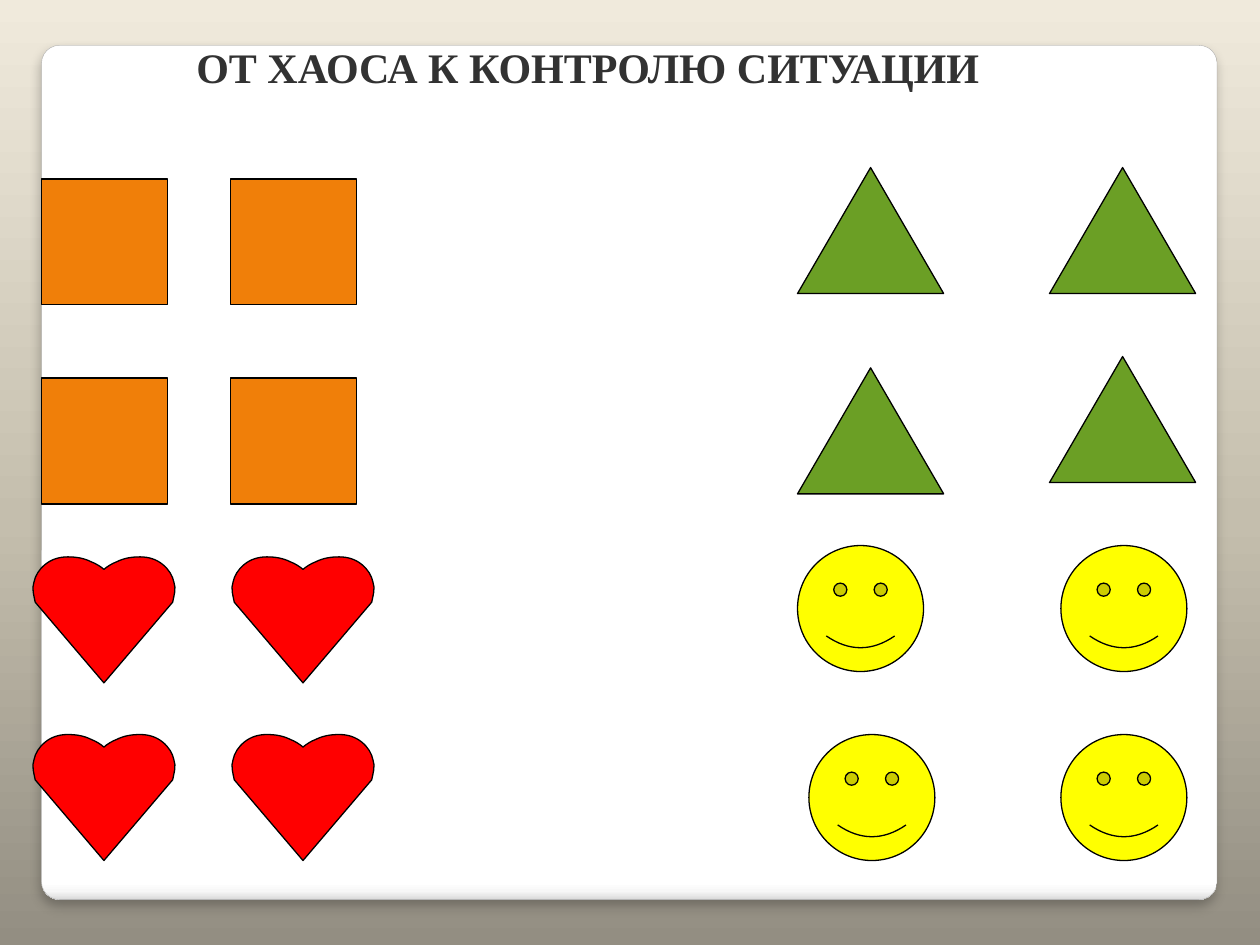
from lxml import etree
from pptx import Presentation
from pptx.dml.color import RGBColor
from pptx.enum.shapes import MSO_SHAPE
from pptx.oxml.ns import qn
from pptx.util import Inches, Pt

COLORS = {
    "title": "323232", "outline": "000000", "panel_edge": "A4A4A4",
    "square": "F07F09", "triangle": "6B9F25", "heart": "FF0000", "smiley": "FFFF00",
}
BACKGROUND_STOPS = [(0, "938E82"), (45, "C4BEAD"), (100, "F0EADC")]
PANEL_STOPS = [(0, "FFFFFF"), (98, "FFFFFF"), (99, "F7F7F7"), (100, "DADADA")]


def set_gradient(fill, element, stops, angle):
    fill.gradient()
    fill.gradient_angle = angle
    stop_list = next(element.iter(qn("a:gsLst")))
    for stop in list(stop_list):
        stop_list.remove(stop)
    for position, color in stops:
        stop = etree.SubElement(stop_list, qn("a:gs"), pos=str(position * 1000))
        etree.SubElement(stop, qn("a:srgbClr"), val=color)


def add_text(slide, text, left, top, width, height, *, font, size, color, bold=False):
    shape = slide.shapes.add_textbox(Inches(left), Inches(top), Inches(width), Inches(height))
    shape.text_frame.word_wrap = True
    run = shape.text_frame.paragraphs[0].add_run()
    run.text = text
    run.font.name = font
    run.font.size = Pt(size)
    run.font.bold = bold
    run.font.color.rgb = RGBColor.from_string(color)


presentation = Presentation()
presentation.slide_width = Inches(10)
presentation.slide_height = Inches(7.5)
slide = presentation.slides.add_slide(presentation.slide_layouts[6])

# Background
set_gradient(slide.background.fill, slide.element, BACKGROUND_STOPS, 90)

# Rounded panel with a soft shadow
panel = slide.shapes.add_shape(
    MSO_SHAPE.ROUNDED_RECTANGLE, Inches(0.33), Inches(0.36), Inches(9.33), Inches(6.78))
panel.adjustments[0] = 0.021
panel.shadow.inherit = False
set_gradient(panel.fill, panel.element, PANEL_STOPS, 270)
panel.line.color.rgb = RGBColor.from_string(COLORS["panel_edge"])
panel.line.width = Pt(0.16)
shadow = etree.SubElement(
    next(panel.element.iter(qn("a:effectLst"))), qn("a:outerShdw"),
    blurRad=str(Pt(6)), dist=str(Pt(4)), dir="5400000", algn="t", rotWithShape="0")
shadow_color = etree.SubElement(shadow, qn("a:srgbClr"), val=COLORS["outline"])
etree.SubElement(shadow_color, qn("a:alpha"), val="25000")

# Heart outline from the top centre: a start point, then three points per curve
RIGHT_HALF = [
    (0, 0.10),
    (0.02, 0.08), (0.07, 0.05), (0.10, 0.04),
    (0.16, 0.01), (0.22, 0), (0.29, 0),
    (0.36, 0), (0.42, 0.02), (0.47, 0.06),
    (0.52, 0.10), (0.55, 0.15), (0.56, 0.20),
    (0.58, 0.25), (0.56, 0.31), (0.55, 0.36),
]
HEART_POINTS = RIGHT_HALF + [(0, 1)] + [(-x, y) for x, y in reversed(RIGHT_HALF)]
CURVE_STARTS = [*range(0, 15, 3), *range(17, 32, 3)]
HEART_CENTER = 0.58

# Four groups of four: name, preset, width, (left, top) of each figure
GROUPS = [
    ("triangle", MSO_SHAPE.ISOSCELES_TRIANGLE, 1.16,
     [(6.33, 1.33), (8.33, 1.33), (6.33, 2.92), (8.33, 2.83)]),
    ("square", MSO_SHAPE.RECTANGLE, 1,
     [(left, top) for top in (1.42, 3) for left in (0.33, 1.83)]),
    ("heart", None, 1.15,
     [(left, top) for top in (4.42, 5.83) for left in (0.25, 1.83)]),
    ("smiley", MSO_SHAPE.SMILEY_FACE, 1,
     [(6.33, 4.33), (8.42, 4.33), (6.42, 5.83), (8.42, 5.83)]),
]
for name, preset, width, places in GROUPS:
    for left, top in places:
        if name == "heart":
            points = [(Inches(left + HEART_CENTER + x), Inches(top + y)) for x, y in HEART_POINTS]
            builder = slide.shapes.build_freeform(*points[0])
            builder.add_line_segments(points[1:], close=True)
            shape = builder.convert_to_shape()
            shape.width = Inches(width)
            # Join each three line segments of a curve into one Bezier segment
            segments = list(shape.element.iter(qn("a:lnTo")))
            for start in CURVE_STARTS:
                curve, *rest = segments[start:start + 3]
                bezier = etree.Element(qn("a:cubicBezTo"))
                curve.addprevious(bezier)
                for segment in (curve, *rest):
                    bezier.append(segment[0])
                    segment.getparent().remove(segment)
        else:
            shape = slide.shapes.add_shape(
                preset, Inches(left), Inches(top), Inches(width), Inches(1))
        shape.shadow.inherit = False
        shape.fill.solid()
        shape.fill.fore_color.rgb = RGBColor.from_string(COLORS[name])
        shape.line.color.rgb = RGBColor.from_string(COLORS["outline"])
        shape.line.width = Pt(0.75)

# Title
add_text(slide, "ОТ ХАОСА К КОНТРОЛЮ СИТУАЦИИ", 1.46, 0.28, 6.49, 0.9,
         font="Times New Roman", size=24, color=COLORS["title"], bold=True)

presentation.save("out.pptx")
